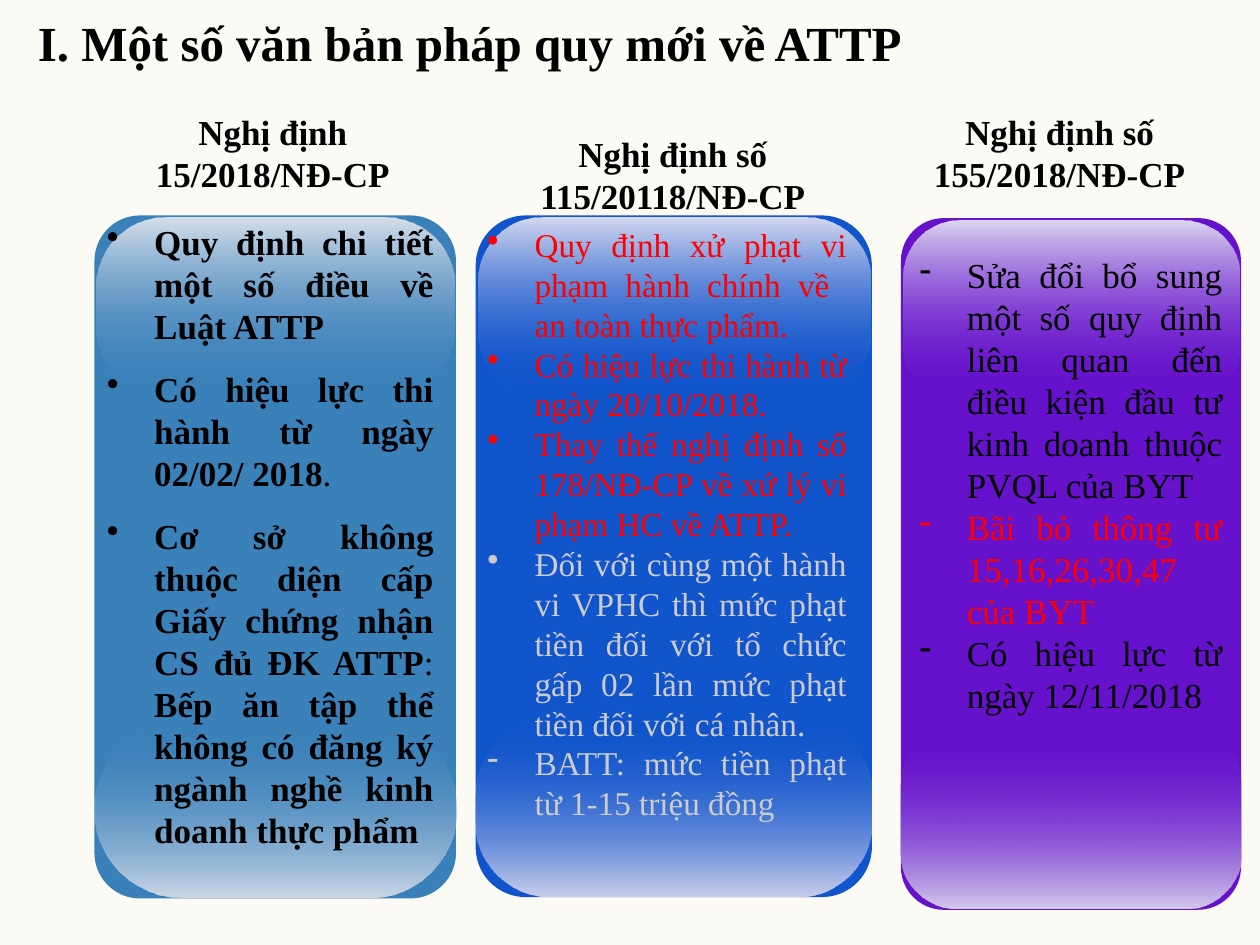
from lxml.etree import SubElement
from pptx import Presentation
from pptx.dml.color import RGBColor
from pptx.enum.shapes import MSO_SHAPE as Preset
from pptx.enum.text import MSO_ANCHOR as Anchor, MSO_AUTO_SIZE as AutoSize, PP_ALIGN as Align
from pptx.oxml.ns import qn
from pptx.util import Pt

FONT = "Times New Roman"
BLACK, RED, GREY = "000000", "FF0000", "CCCCCC"
INDENT = 27

# Each item: bullet, colour, then spans of (text, bold)
DETAILS_15 = [
    ("•", BLACK, [("Quy định chi tiết một số điều về Luật ATTP", True)]),
    ("•", BLACK, [("Có hiệu lực thi hành từ ngày 02/02/ 2018", True), (".", False)]),
    ("•", BLACK, [
        ("Cơ sở không thuộc diện cấp Giấy chứng nhận CS đủ ĐK ATTP", True),
        (": ", False),
        ("Bếp ăn tập thể không có đăng ký ngành nghề kinh doanh thực phẩm", True),
    ]),
]
DETAILS_115 = [
    ("•", RED, [("Quy định xử phạt vi phạm hành chính về  an toàn thực phẩm.", False)]),
    ("•", RED, [("Có hiệu lực thi hành từ ngày 20/10/2018.", False)]),
    ("•", RED, [("Thay thế nghị định số 178/NĐ-CP về xứ lý vi phạm HC về ATTP.", False)]),
    ("•", GREY, [("Đối với cùng một hành vi VPHC thì mức phạt tiền đối với tổ chức "
                  "gấp 02 lần mức phạt tiền đối với cá nhân.", False)]),
    ("-", GREY, [("BATT: mức tiền phạt từ 1-15 triệu đồng", False)]),
]
DETAILS_155 = [
    ("-", BLACK, [("Sửa đổi bổ sung một số quy định liên quan đến điều kiện đầu tư "
                   "kinh doanh thuộc PVQL của BYT", False)]),
    ("-", RED, [("Bãi bỏ thông tư 15,16,26,30,47 của BYT", False)]),
    ("-", BLACK, [("Có hiệu lực từ ngày 12/11/2018", False)]),
]

# Boxes are left, top, width, height; corners are base, lower glow, upper sheen
COLUMNS = [
    dict(panel=(54, 123.1, 206.6, 390.3), colour="3A81BA", glow="CCD7E6", sheen="D7DFEB",
         corners=(0.126, 0.498, 0.387),
         header="Nghị định 15/2018/NĐ-CP", header_box=(56.9, 59.8, 198, 55.4),
         items=DETAILS_15, body_box=(54, 122.4, 200.9, 370.8), size=20, gap=6),
    dict(panel=(271.8, 123.1, 226.4, 389.5), colour="1155CC", glow="CBCFEC", sheen="D6D9F0",
         corners=(0.126, 0.426, 0.359),
         header="Nghị định số 115/20118/NĐ-CP", header_box=(272.2, 72, 224.6, 55.4),
         items=DETAILS_115, body_box=(271.4, 124.6, 219.6, 352.8), size=19, gap=0),
    dict(panel=(514.8, 124.6, 194.4, 395.3), colour="6611CC", glow="D2CBEC", sheen="DBD6F0",
         corners=(0.126, 0.321, 0.313),
         header="Nghị định số 155/2018/NĐ-CP", header_box=(508.3, 59.8, 194.4, 55.4),
         items=DETAILS_155, body_box=(518.4, 141.1, 187.2, 273.6), size=20, gap=0),
]


def rgb(value):
    return RGBColor.from_string(value)


def points(box):
    return [Pt(value) for value in box]


def format_span(span, size, colour, bold):
    span.font.name = FONT
    span.font.size = Pt(size)
    span.font.bold = bold
    span.font.color.rgb = rgb(colour)


def add_text_shadow(span):
    effects = SubElement(span.font._element, qn("a:effectLst"))
    # The fill must come first and the typeface last in the run properties
    span.font._element.find(qn("a:solidFill")).addnext(effects)
    shadow = SubElement(effects, qn("a:outerShdw"), blurRad="38100", dist="38100",
                        dir="2700000", algn="tl")
    SubElement(shadow, qn("a:srgbClr"), val=BLACK)


def set_bullet(para, symbol):
    props = para._p.get_or_add_pPr()
    props.set("marL", str(Pt(INDENT)))
    props.set("indent", str(-Pt(INDENT)))
    SubElement(props, qn("a:buFontTx"))
    SubElement(props, qn("a:buChar"), char=symbol)


def add_rounded(group, box, corner):
    shape = group.shapes.add_shape(Preset.ROUNDED_RECTANGLE, *points(box))
    shape.adjustments[0] = corner
    shape.shadow.inherit = False
    shape.line.fill.background()
    return shape


def fill_fading(shape, start, end, clear):
    """Fill downwards from start to end; the colour named clear is transparent."""
    shape.fill.gradient()
    shape.fill.gradient_angle = 270
    for stop, position, colour in zip(shape.fill.gradient_stops, (0, 1), (start, end)):
        stop.position = position
        stop.color.rgb = rgb(colour)
    for node in shape._element.spPr.iter(qn("a:srgbClr")):
        if node.get("val") == clear:
            SubElement(node, qn("a:alpha"), val="0")


def add_panel(page, box, colour, glow, sheen, corners):
    left, top, width, height = box
    band = round(height * 0.258, 2)
    group = page.shapes.add_group_shape()
    base = add_rounded(group, box, corners[0])
    base.fill.solid()
    base.fill.fore_color.rgb = rgb(colour)
    lower = add_rounded(group, (left, top + height - band - 0.5, width, band), corners[1])
    fill_fading(lower, colour, glow, colour)
    upper = add_rounded(group, (left + 1.4, top + 1.4, width - 2.4, band), corners[2])
    fill_fading(upper, sheen, colour, colour)


def add_text_frame(page, box):
    frame = page.shapes.add_textbox(*points(box)).text_frame
    frame.word_wrap = True
    frame.auto_size = AutoSize.SHAPE_TO_FIT_TEXT
    return frame


def add_details(page, box, items, size, gap):
    frame = add_text_frame(page, box)
    for number, (symbol, colour, spans) in enumerate(items):
        para = frame.add_paragraph() if number else frame.paragraphs[0]
        para.alignment = Align.JUSTIFY
        para.space_before = para.space_after = Pt(gap)
        set_bullet(para, symbol)
        for text, bold in spans:
            span = para.add_run()
            span.text = text
            format_span(span, size, colour, bold)
            add_text_shadow(span)


def add_header(page, box, text):
    frame = add_text_frame(page, box)
    frame.text = text
    para = frame.paragraphs[0]
    para.alignment = Align.CENTER
    format_span(para.runs[0], 20, BLACK, True)


def set_title(page, box, text):
    title = page.shapes.title
    title.left, title.top, title.width, title.height = points(box)
    frame = title.text_frame
    frame.text = text
    frame.vertical_anchor = Anchor.TOP
    frame.margin_left = frame.margin_top = frame.margin_right = frame.margin_bottom = Pt(7.2)
    frame.paragraphs[0].alignment = Align.LEFT
    format_span(frame.paragraphs[0].runs[0], 28, BLACK, True)


def main():
    deck = Presentation()
    deck.slide_width, deck.slide_height = Pt(720), Pt(540)
    page = deck.slides.add_slide(deck.slide_layouts[5])
    page.background.fill.solid()
    page.background.fill.fore_color.rgb = rgb("FBFAF5")
    set_title(page, (14.4, 0, 648, 72.7), "I. Một số văn bản pháp quy mới về ATTP")
    for column in COLUMNS:
        add_panel(page, column["panel"], column["colour"], column["glow"],
                  column["sheen"], column["corners"])
        add_details(page, column["body_box"], column["items"], column["size"], column["gap"])
        add_header(page, column["header_box"], column["header"])
    deck.save("out.pptx")


if __name__ == "__main__":
    main()
